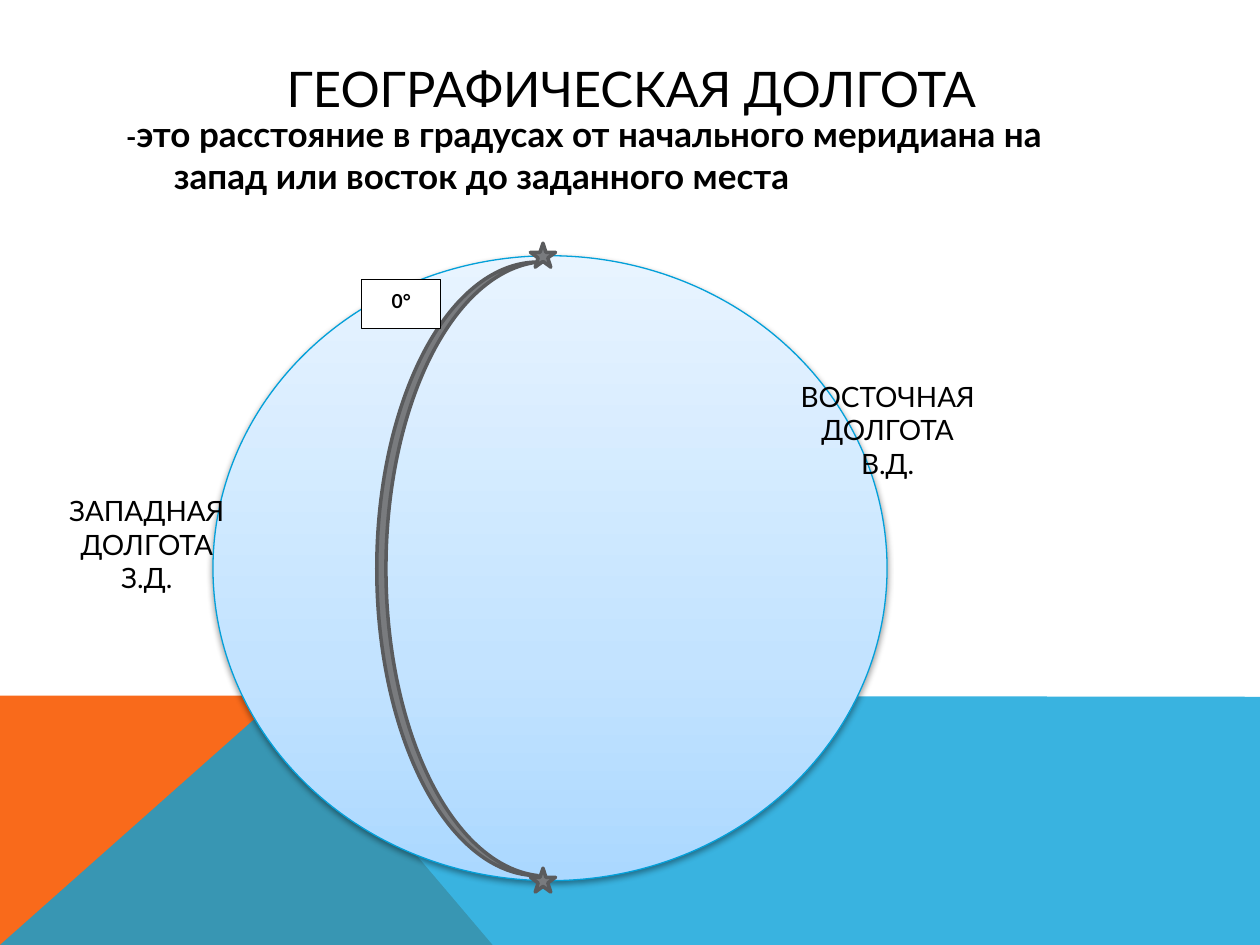
"""Build a slide that explains geographic longitude with a globe diagram."""
from lxml.etree import SubElement
from pptx import Presentation
from pptx.dml.color import RGBColor
from pptx.enum.shapes import MSO_SHAPE
from pptx.enum.text import MSO_ANCHOR, MSO_AUTO_SIZE, PP_ALIGN
from pptx.oxml import parse_xml
from pptx.oxml.ns import nsdecls, qn
from pptx.util import Inches, Pt

BLACK = RGBColor(0, 0, 0)
WHITE = RGBColor(255, 255, 255)
ORANGE = RGBColor(0xF9, 0x6A, 0x1B)
BLUE = RGBColor(0x08, 0xA1, 0xD9)
RIM = RGBColor(0x03, 0xA0, 0xD9)
GRAY = RGBColor(0x79, 0x7B, 0x7E)
DARK = RGBColor(0x5A, 0x5B, 0x5D)
SHADES = [(0, "ABD8FF"), (35, "C3E3FF"), (100, "E8F4FF")]

TITLE = "ГЕОГРАФИЧЕСКАЯ ДОЛГОТА"
BODY = [
    ("-", 16),
    ("это расстояние в градусах от начального меридиана на запад или восток до заданного места", 20),
]
SIDES = [
    (5.89, 2.96, ["ВОСТОЧНАЯ ДОЛГОТА", "В.Д."]),
    (0.01, 3.87, ["ЗАПАДНАЯ ДОЛГОТА", "З.Д."]),
]
BANDS = [
    (ORANGE, [(0, 7.5), (0, 5.52), (2.23, 5.52), (3.91, 7.5)]),
    (BLUE, [(0, 7.5), (2.23, 5.52), (10, 5.53), (10, 7.5)]),
]
GLOBE = (1.69, 2.03, 5.35, 4.96)
MOON = (2.99, 2.08, 1.28, 4.87)
ZERO = (2.87, 2.22, 0.63, 0.39)
STARS = [(4.21, top, 0.2, 0.19) for top in (1.93, 6.89)]


def style(item, **look):
    for name, value in look.items():
        setattr(item, name, value)


def write(para, text, size, bold=False):
    run = para.add_run()
    run.text = text
    style(run.font, name="Lato", size=Pt(size), bold=bold)
    run.font.color.rgb = BLACK


def place(item, left, top, width, height):
    box = dict(left=left, top=top, width=width, height=height)
    style(item, **{side: Inches(value) for side, value in box.items()})


def paint(shape, fill, edge=None, width=0):
    shape.shadow.inherit = False
    shape.fill.solid()
    shape.fill.fore_color.rgb = fill
    if edge is None:
        shape.line.fill.background()
    else:
        shape.line.color.rgb = edge
        shape.line.width = Pt(width)


def draw(kind, box, fill, edge, width):
    shape = slide.shapes.add_shape(kind, *map(Inches, box))
    paint(shape, fill, edge, width)
    return shape


def shade(shape):
    props = shape._element.spPr
    stops = "".join(
        f'<a:gs pos="{pos * 1000}"><a:srgbClr val="{tint}"/></a:gs>' for pos, tint in SHADES
    )
    grad = parse_xml(
        f'<a:gradFill {nsdecls("a")}><a:gsLst>{stops}</a:gsLst>'
        '<a:lin ang="16200000" scaled="0"/></a:gradFill>'
    )
    props.replace(props.find(qn("a:solidFill")), grad)
    props.find(qn("a:effectLst")).append(parse_xml(
        f'<a:outerShdw {nsdecls("a")} blurRad="{Pt(3.1)}" dist="{Pt(1.6)}" dir="5400000" '
        'rotWithShape="0"><a:srgbClr val="000000"><a:alpha val="38000"/></a:srgbClr></a:outerShdw>'
    ))


deck = Presentation()
style(deck, slide_width=Inches(10), slide_height=Inches(7.5))
slide = deck.slides.add_slide(deck.slide_layouts[1])
title, body = slide.placeholders

for tone, points in BANDS:
    first, *rest = [(Inches(x), Inches(y)) for x, y in points]
    path = slide.shapes.build_freeform(*first)
    path.add_line_segments(rest, close=True)
    band = path.convert_to_shape()
    paint(band, tone)
    title._element.addprevious(band._element)
tint = band._element.spPr.find(qn("a:solidFill"))[0]
SubElement(tint, qn("a:alpha")).set("val", "80000")

place(title, 0.9, 0.4, 8.22, 0.6)
style(title.text_frame, vertical_anchor=MSO_ANCHOR.MIDDLE, auto_size=MSO_AUTO_SIZE.NONE)
para = title.text_frame.paragraphs[0]
para.alignment = PP_ALIGN.CENTER
write(para, TITLE, 28)

place(body, 0.9, 0.84, 8.22, 4.28)
body.text_frame.auto_size = MSO_AUTO_SIZE.NONE
para = body.text_frame.paragraphs[0]
para.space_before = Pt(8)
props = para._p.get_or_add_pPr()
props.set("marL", str(Inches(0.38)))
props.set("indent", str(Inches(-0.38)))
SubElement(props, qn("a:buNone"))
for text, size in BODY:
    write(para, text, size, True)

shade(draw(MSO_SHAPE.OVAL, GLOBE, WHITE, RIM, 0.75))

for left, top, lines in SIDES:
    label = slide.shapes.add_textbox(*map(Inches, (left, top, 2.31, 0.64)))
    frame = label.text_frame
    frame.word_wrap = True
    for i, text in enumerate(lines):
        para = frame.add_paragraph() if i else frame.paragraphs[0]
        para.alignment = PP_ALIGN.CENTER
        write(para, text, 16)

for box in STARS:
    draw(MSO_SHAPE.STAR_5_POINT, box, GRAY, DARK, 2)
moon = draw(MSO_SHAPE.MOON, MOON, GRAY, DARK, 2)
moon.adjustments[0] = 0.057

zero = draw(MSO_SHAPE.RECTANGLE, ZERO, WHITE, BLACK, 0.5)
zero.text_frame.vertical_anchor = MSO_ANCHOR.TOP
para = zero.text_frame.paragraphs[0]
style(para, alignment=PP_ALIGN.CENTER, line_spacing=1.15, space_after=Pt(10))
write(para, "0°", 11, True)

deck.save("out.pptx")
